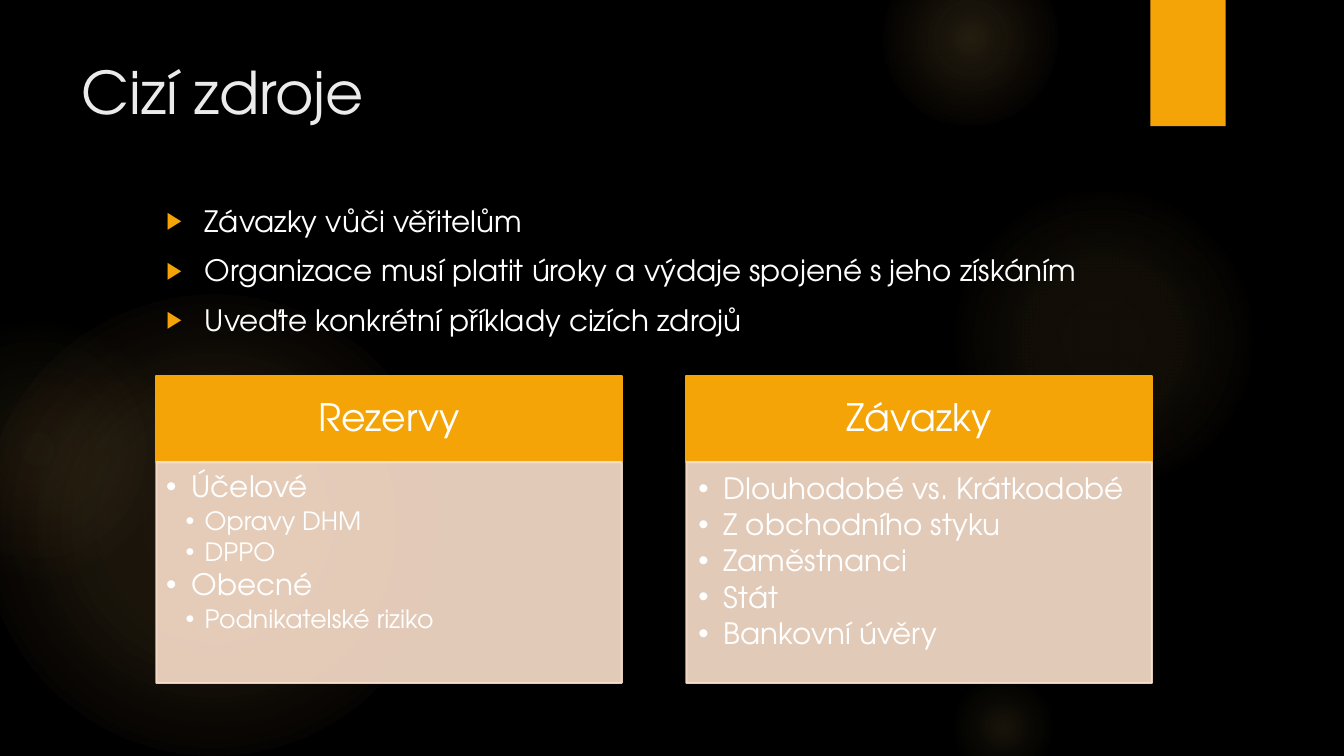
from lxml import etree
from pptx import Presentation
from pptx.dml.color import RGBColor as Color
from pptx.enum.shapes import MSO_SHAPE as Kind
from pptx.enum.text import MSO_ANCHOR as Anchor, MSO_AUTO_SIZE as Fit, PP_ALIGN as Align
from pptx.oxml import parse_xml as to_xml
from pptx.oxml.ns import nsdecls, qn
from pptx.util import Cm, Pt

FONT = "TeX Gyre Adventor"
BLACK = RGBColor = Color(0x00, 0x00, 0x00)
WHITE = Color(0xFF, 0xFF, 0xFF)
PALE = Color(0xEB, 0xEB, 0xEB)
AMBER = Color(0xF5, 0xA4, 0x08)
PEACH = Color(0xFB, 0xE0, 0xCC)
GLOW = Color(0xFA, 0xC9, 0x6A)

# Left, top, diameter in cm, then (position, opacity) stops in percent
GLOWS = [
    (-0.43, 7.42, 11.63, [(0, 11), (36, 10), (75, 0)]),
    (-2.34, 8.05, 6.55, [(0, 8), (36, 5), (71, 0)]),
    (23.9, 4.65, 7.82, [(0, 7), (36, 6), (69, 0)]),
    (22.23, -1.27, 4.45, [(0, 14), (36, 7), (73, 0)]),
    (23.9, 16.94, 2.74, [(0, 10), (31, 5), (66, 0)]),
]
POINTS = [
    "Závazky vůči věřitelům",
    "Organizace musí platit úroky a výdaje spojené s jeho získáním",
    "Uveďte konkrétní příklady cizích zdrojů",
]
# Heading, inset in cm, (level, text) items
PANELS = [
    ("Rezervy", 0.25, [(0, "Účelové"), (1, "Opravy DHM"), (1, "DPPO"),
                       (0, "Obecné"), (1, "Podnikatelské riziko")]),
    ("Závazky", 0.3, [(0, "Dlouhodobé vs. Krátkodobé"), (0, "Z obchodního styku"),
                      (0, "Zaměstnanci"), (0, "Stát"), (0, "Bankovní úvěry")]),
]
LEFT, TOP, WIDTH, STEP = 3.94, 9.47, 11.73, 13.36
HEAD, BODY = 2.18, 5.56


def place(shape, *box):
    shape.left, shape.top, shape.width, shape.height = map(Cm, box)


def style(para, size, color=WHITE):
    para.font.name = FONT
    para.font.size = Pt(size)
    para.font.color.rgb = color


def bullet(para, char, left, hang, color=WHITE, scale=100):
    props = para._p.get_or_add_pPr()
    props.set("marL", str(Cm(left)))
    props.set("indent", str(-Cm(hang)))
    ns = nsdecls("a")
    for xml in (f'<a:buClr {ns}><a:srgbClr val="{color}"/></a:buClr>',
                f'<a:buSzPct {ns} val="{scale * 1000}"/>',
                f'<a:buFont {ns} typeface="Arial"/>',
                f'<a:buChar {ns} char="{char}"/>'):
        props.append(to_xml(xml))


def lines(frame, items):
    """Yield one paragraph for each item, filled with its text."""
    for i, text in enumerate(items):
        para = frame.add_paragraph() if i else frame.paragraphs[0]
        para.text = text
        yield para


def fade(fill, alpha):
    color = fill._xPr.find(qn("a:solidFill"))[0]
    etree.SubElement(color, qn("a:alpha")).set("val", str(alpha * 1000))


def block(slide, kind, box, color):
    shape = slide.shapes.add_shape(kind, *map(Cm, box))
    shape.shadow.inherit = False
    shape.fill.solid()
    shape.fill.fore_color.rgb = color
    shape.line.fill.background()
    return shape


def glow(slide, left, top, size, stops):
    shape = block(slide, Kind.OVAL, (left, top, size, size), GLOW)
    marks = "".join(
        f'<a:gs pos="{pos * 1000}"><a:srgbClr val="{GLOW}">'
        f'<a:alpha val="{alpha * 1000}"/></a:srgbClr></a:gs>'
        for pos, alpha in stops)
    props = shape._element.spPr
    props.replace(props.find(qn("a:solidFill")), to_xml(
        f'<a:gradFill {nsdecls("a")}><a:gsLst>{marks}</a:gsLst><a:path path="circle">'
        '<a:fillToRect l="50000" t="50000" r="50000" b="50000"/></a:path></a:gradFill>'))


def card(slide, box, color, alpha, pads):
    shape = block(slide, Kind.RECTANGLE, box, color)
    shape.line.color.rgb = color
    shape.line.width = Pt(1.5)
    if alpha < 100:
        fade(shape.fill, alpha)
        fade(shape.line.fill, alpha)
    frame = shape.text_frame
    frame.word_wrap = True
    (frame.margin_left, frame.margin_top,
     frame.margin_right, frame.margin_bottom) = map(Cm, pads)
    return frame


def panel(slide, left, head, inset, items):
    # Heading
    frame = card(slide, (left, TOP, WIDTH, HEAD), AMBER, 100, (0.53, 0.3, 0.53, 0.3))
    frame.vertical_anchor = Anchor.MIDDLE
    para = frame.paragraphs[0]
    para.text = head
    para.alignment = Align.CENTER
    para.line_spacing = 0.9
    style(para, 27)

    # List
    pads = (inset, inset, inset + 0.1, inset + 0.15)
    frame = card(slide, (left, TOP + HEAD, WIDTH, BODY), PEACH, 90, pads)
    frame.vertical_anchor = Anchor.TOP
    levels = [level for level, _ in items]
    for level, para in zip(levels, lines(frame, [text for _, text in items])):
        size = 18 if level else 21
        para.level = level
        para.alignment = Align.LEFT
        para.line_spacing = 0.9
        para.space_after = Pt(0.15 * size)
        bullet(para, "•", *((0.97, 0.48) if level else (0.64, 0.64)))
        style(para, size)


def title(slide, text):
    shape = slide.shapes.title
    place(shape, 1.8, 1.27, 26.14, 2.03)
    slide.shapes._spTree.append(shape._element)
    frame = shape.text_frame
    frame.auto_size = Fit.NONE
    frame.vertical_anchor = Anchor.MIDDLE
    para = frame.paragraphs[0]
    para.text = text
    para.alignment = Align.LEFT
    style(para, 42, PALE)


def points(slide, items):
    shape = slide.placeholders[1]
    place(shape, LEFT, 4.98, 24.41, 3.61)
    slide.shapes._spTree.append(shape._element)
    frame = shape.text_frame
    frame.auto_size = Fit.NONE
    for para in lines(frame, items):
        para.space_before = Pt(4.2)
        para.space_after = Pt(6)
        bullet(para, "▶", 0.97, 0.97, AMBER, 80)
        style(para, 21)


def main():
    deck = Presentation()
    deck.slide_width, deck.slide_height = Cm(33.87), Cm(19.05)
    slide = deck.slides.add_slide(deck.slide_layouts[1])

    # Backdrop
    slide.background.fill.solid()
    slide.background.fill.fore_color.rgb = BLACK
    for spot in GLOWS:
        glow(slide, *spot)
    block(slide, Kind.RECTANGLE, (28.99, 0, 1.9, 3.18), AMBER)

    # Content
    title(slide, "Cizí zdroje")
    points(slide, POINTS)
    for i, parts in enumerate(PANELS):
        panel(slide, LEFT + i * STEP, *parts)

    deck.save("out.pptx")


if __name__ == "__main__":
    main()
